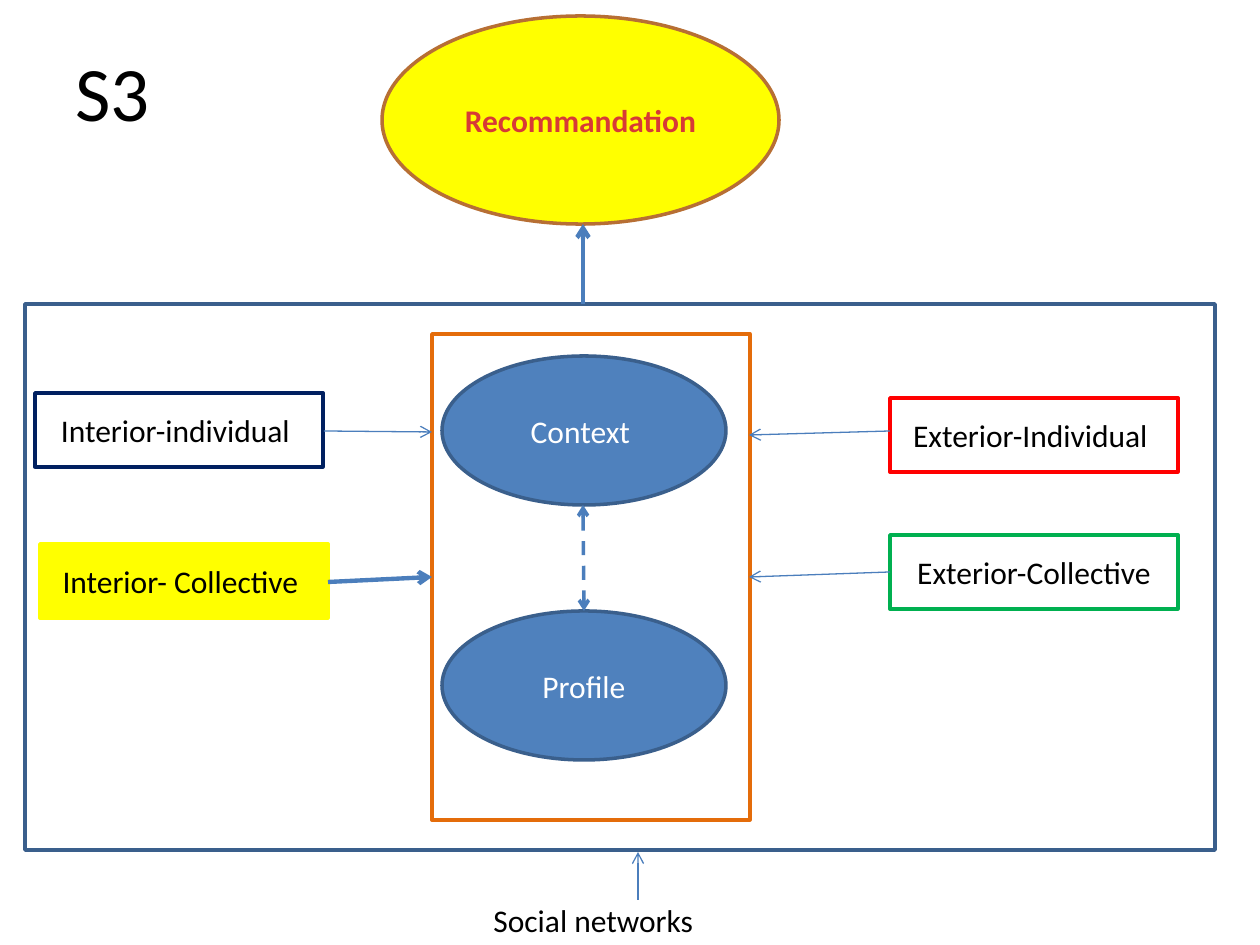
from lxml.etree import SubElement
from pptx import Presentation
from pptx.dml.color import RGBColor
from pptx.enum.shapes import MSO_CONNECTOR, MSO_SHAPE
from pptx.enum.text import MSO_ANCHOR, PP_ALIGN
from pptx.oxml.ns import qn
from pptx.util import Emu, Pt

PX = 914400 / 126
COLORS = {
    "blue": "4F81BD", "edge": "3A5F8C", "arrow": "4B7EBC", "navy": "002060",
    "red": "FF0000", "green": "00B050", "yellow": "FFFF00", "orange": "E46C0A",
    "brown": "B76F34", "brick": "D73A36", "white": "FFFFFF", "black": "000000",
}


def px(*lengths):
    return [Emu(round(length * PX)) for length in lengths]


def write(shape, text, size, color, bold=False):
    shape.text_frame.word_wrap = True
    shape.text_frame.text = text
    font = shape.text_frame.paragraphs[0].runs[0].font
    font.name, font.size, font.bold = "Calibri", Pt(size), bold
    font.color.rgb = RGBColor.from_string(COLORS[color])


presentation = Presentation()
presentation.slide_width, presentation.slide_height = px(1260, 945)
slide = presentation.slides.add_slide(presentation.slide_layouts[6])

# Ellipses, category boxes and frames: kind, box, fill, line, text, text colour
OVAL, BOX = MSO_SHAPE.OVAL, MSO_SHAPE.RECTANGLE
shapes = [
    (OVAL, (382, 16, 397, 208), "yellow", "brown", "Recommandation", "brick"),
    (OVAL, (442, 611, 284, 149), "blue", "edge", "Profile", "white"),
    (BOX, (35, 393, 288, 74), "white", "navy", "Interior-individual ", "black"),
    (BOX, (890, 398, 288, 74), "white", "red", "Exterior-Individual ", "black"),
    (BOX, (40, 544, 288, 74), "yellow", "yellow", "Interior- Collective ", "black"),
    (BOX, (890, 535, 288, 74), "white", "green", "Exterior-Collective", "black"),
    (OVAL, (442, 356, 284, 149), "blue", "edge", "Context ", "white"),
    (BOX, (25, 304, 1190, 546), None, "edge", "", None),
    (BOX, (432, 334, 318, 486), None, "orange", "", None),
]
for kind, box, fill, line, text, color in shapes:
    shape = slide.shapes.add_shape(kind, *px(*box))
    shape.shadow.inherit = False
    shape.line.color.rgb = RGBColor.from_string(COLORS[line])
    shape.line.width = Pt(2)
    if fill:
        shape.fill.solid()
        shape.fill.fore_color.rgb = RGBColor.from_string(COLORS[fill])
    else:
        shape.fill.background()
    if text:
        write(shape, text, 18, color, bold=text == "Recommandation")
        shape.text_frame.vertical_anchor = MSO_ANCHOR.MIDDLE
        shape.text_frame.paragraphs[0].alignment = PP_ALIGN.CENTER

# Arrows: start and end, width, dashed and double-headed
arrows = [
    ((324, 431, 432, 432), 0.75, False),
    ((328, 582, 432, 577), 2.5, False),
    ((890, 572, 749, 577), 0.75, False),
    ((583, 505, 584, 611), 2, True),
    ((583, 304, 583, 224), 2.5, False),
    ((890, 431, 749, 435), 0.75, False),
    ((638, 900, 638, 852), 0.75, False),
]
for ends, width, double in arrows:
    arrow = slide.shapes.add_connector(MSO_CONNECTOR.STRAIGHT, *px(*ends))
    arrow.line.color.rgb = RGBColor.from_string(COLORS["arrow"])
    arrow.line.width = Pt(width)
    outline = arrow.line._get_or_add_ln()
    if double:
        SubElement(outline, qn("a:prstDash"), val="dash")
        SubElement(outline, qn("a:headEnd"), type="arrow")
    SubElement(outline, qn("a:tailEnd"), type="arrow")
    SubElement(arrow._element.spPr, qn("a:effectLst"))

# Title and caption
for box, text, size in [((63, 38, 1134, 158), "S3", 44),
                        ((481, 895, 457, 50), "Social networks", 18)]:
    write(slide.shapes.add_textbox(*px(*box)), text, size, "black")

presentation.save("out.pptx")
